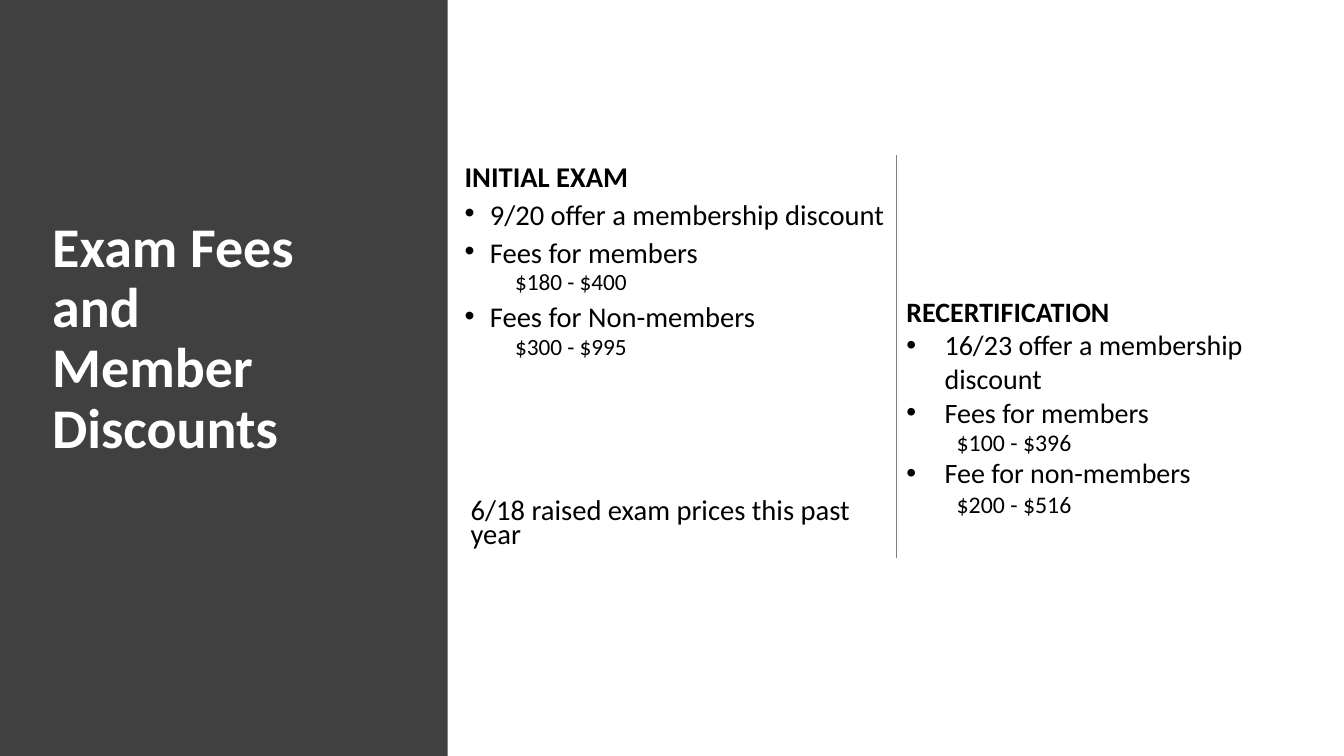
from lxml import etree
from pptx import Presentation
from pptx.dml.color import RGBColor
from pptx.enum.shapes import MSO_CONNECTOR, MSO_SHAPE
from pptx.enum.text import MSO_ANCHOR
from pptx.oxml.ns import qn
from pptx.util import Inches, Pt

RECTANGLE = MSO_SHAPE.RECTANGLE
STRAIGHT = MSO_CONNECTOR.STRAIGHT
TOP = MSO_ANCHOR.TOP

FONT = "Calibri"
COLORS = {"panel": "404040", "title": "FFFFFF", "text": "000000", "divider": "808080"}

# Each line is (kind, wording)
INITIAL_EXAM = [
    ("heading", "INITIAL EXAM"),
    ("bullet", "9/20 offer a membership discount"),
    ("bullet", "Fees for members"),
    ("amount", "$180 - $400"),
    ("bullet", "Fees for Non-members"),
    ("amount", "$300 - $995"),
]
RECERTIFICATION = [
    ("heading", "RECERTIFICATION"),
    ("bullet", "16/23 offer a membership discount"),
    ("bullet", "Fees for members"),
    ("amount", "$100 - $396"),
    ("bullet", "Fee for non-members"),
    ("amount", "$200 - $516"),
]


def color(name):
    return RGBColor.from_string(COLORS[name])


def add_text(page, left, top, width, height, wording):
    box = page.shapes.add_textbox(Inches(left), Inches(top), Inches(width), Inches(height))
    frame = box.text_frame
    frame.word_wrap = True
    frame.vertical_anchor = TOP
    frame.text = wording
    return frame


def style_para(para, size, color_name="text", bold=False, spacing=1.0, before=0):
    para.line_spacing = spacing
    para.space_before = Pt(before)
    for span in para.runs:
        span.font.name = FONT
        span.font.size = Pt(size)
        span.font.bold = bold
        span.font.color.rgb = color(color_name)


def indent_para(para, margin, bullet=False):
    properties = para._p.get_or_add_pPr()
    properties.set("marL", str(Inches(margin)))
    properties.set("indent", str(Inches(-margin if bullet else 0)))
    if bullet:
        etree.SubElement(properties, qn("a:buFont")).set("typeface", "Arial")
        etree.SubElement(properties, qn("a:buChar")).set("char", "•")


def add_title_panel(page, left, top, width, height):
    panel = page.shapes.add_shape(RECTANGLE, Inches(left), Inches(top), Inches(width), Inches(height))
    panel.shadow.inherit = False
    panel.fill.solid()
    panel.fill.fore_color.rgb = color("panel")
    panel.line.fill.background()
    frame = add_text(page, left + 0.42, top + 2.12, width - 0.64, 2.77,
                     "Exam Fees\vand\vMember Discounts")
    style_para(frame.paragraphs[0], 40, "title", bold=True, spacing=0.9)


def add_fee_list(page, left, top, width, height, lines, sizes, hang, tight):
    """Fee column; a tight one has reduced line spacing and gaps between paragraphs."""
    frame = add_text(page, left, top, width, height, "\n".join(words for _, words in lines))
    text_size, amount_size = sizes
    for para, (kind, _) in zip(frame.paragraphs, lines):
        is_amount = kind == "amount"
        gap = 5 if is_amount else 10
        style_para(para, amount_size if is_amount else text_size, bold=kind == "heading",
                   spacing=0.7 if tight else 1.0, before=gap if tight else 0)
        if is_amount:
            para.level = 1
            indent_para(para, 0.5)
        elif kind == "bullet":
            indent_para(para, hang, bullet=True)
    return frame


def add_divider(page, left, top, height):
    divider = page.shapes.add_connector(STRAIGHT, Inches(left), Inches(top),
                                        Inches(left), Inches(top + height))
    divider.line.color.rgb = color("divider")
    divider.line.width = Pt(1)
    etree.SubElement(divider._element.spPr, qn("a:effectLst"))


def add_price_note(page, left, top, width, height):
    frame = add_text(page, left, top, width, height, "6/18 raised exam prices this past year")
    style_para(frame.paragraphs[0], 20.4, spacing=0.7, before=10)


def build_fees_slide(deck):
    page = deck.slides.add_slide(deck.slide_layouts[6])
    # Title side
    add_title_panel(page, 0, 0, 4.44, 7.5)
    # Initial exam column
    add_fee_list(page, 4.51, 1.62, 4.38, 4.56, INITIAL_EXAM, (20.4, 16.6), 0.25, tight=True)
    add_divider(page, 8.89, 1.54, 4)
    add_price_note(page, 4.57, 4.92, 4.2, 0.63)
    # Recertification column
    frame = add_fee_list(page, 8.89, 2.87, 4.38, 2.34, RECERTIFICATION, (20, 17), 0.38, tight=False)
    first_amount = frame.paragraphs[3]
    first_amount.line_spacing = 0.7
    first_amount.space_before = Pt(5)


def main():
    deck = Presentation()
    deck.slide_width = Inches(13.33)
    deck.slide_height = Inches(7.5)
    build_fees_slide(deck)
    deck.save("out.pptx")


if __name__ == "__main__":
    main()
